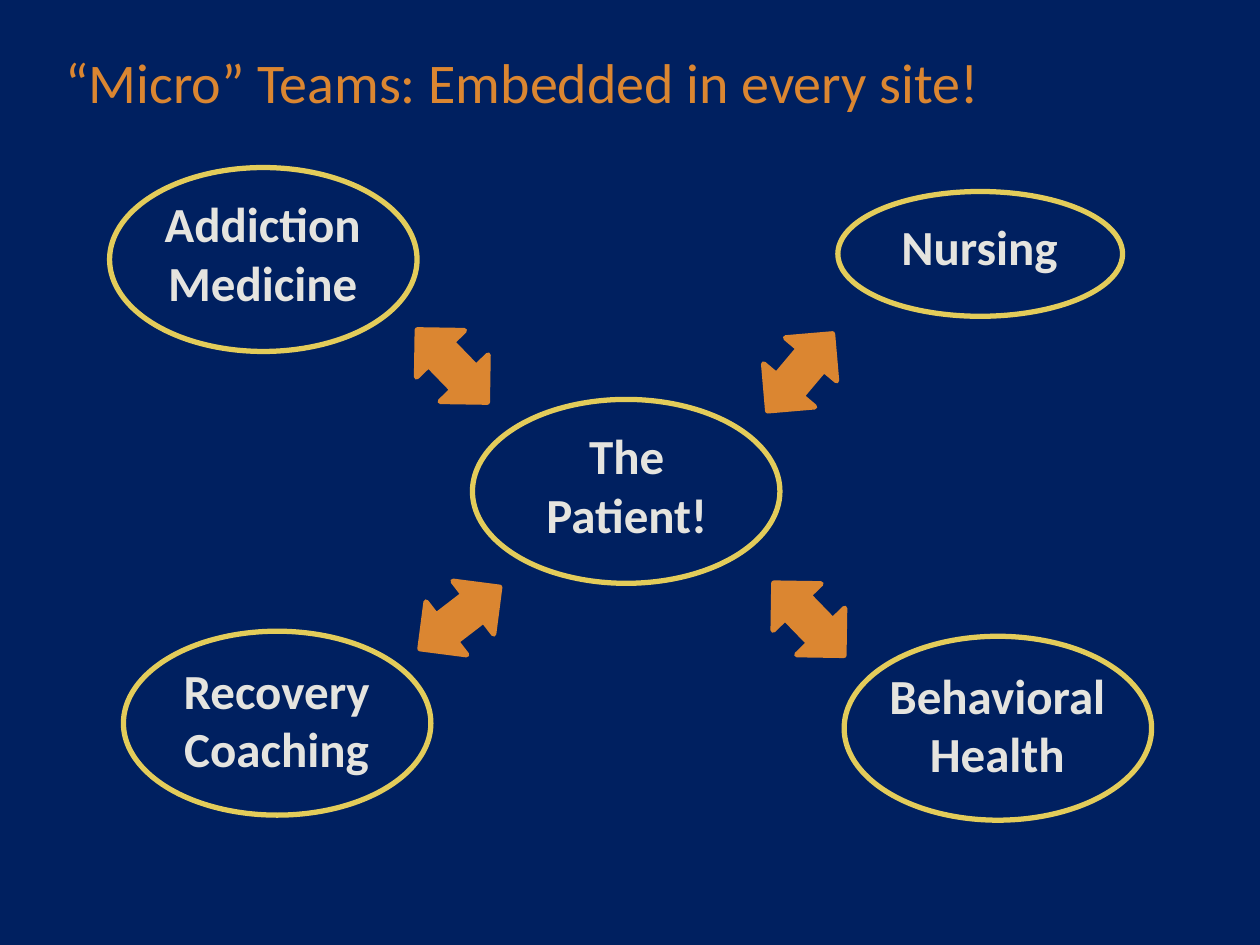
"""Build a slide of the care teams placed around the patient."""
import pptx
import pptx.util
import pptx.dml.color
import pptx.enum.shapes
import pptx.enum.text

Inches = pptx.util.Inches
Kind = pptx.enum.shapes.MSO_SHAPE
Align = pptx.enum.text.PP_ALIGN
hues = {"back": "002060", "accent": "DB8631", "ring": "E3CC5A", "label": "E5E4DF"}
tint = {name: pptx.dml.color.RGBColor.from_string(hue) for name, hue in hues.items()}
title_font = {"name": "Calibri", "size": pptx.util.Pt(32), "bold": False}
label_font = {"name": "Calibri", "size": pptx.util.Pt(28), "bold": True}

deck = pptx.Presentation()
deck.slide_width, deck.slide_height = Inches(10), Inches(7.5)
slide = deck.slides.add_slide(deck.slide_layouts[6])
slide.background.fill.solid()
slide.background.fill.fore_color.rgb = tint["back"]


def add_text(box, text, look, hue, align):
    frame = slide.shapes.add_textbox(*map(Inches, box)).text_frame
    frame.word_wrap = True
    frame.text = text
    for para in frame.paragraphs:
        para.alignment = align
        para.font.color.rgb = tint[hue]
        for key, value in look.items():
            setattr(para.font, key, value)


def add_form(kind, box, hue, turn=0):
    form = slide.shapes.add_shape(kind, *map(Inches, box))
    form.shadow.inherit = False
    form.rotation = turn
    form.fill.background()
    form.line.color.rgb = tint[hue]
    form.line.width = pptx.util.Pt(3)
    return form


add_text((0.42, 0.33, 9.27, 0.75), "“Micro” Teams: Embedded in every site!",
         title_font, "accent", Align.LEFT)

arrows = [(3.19, 2.64, 45.9), (5.95, 2.69, 130.1),
          (3.25, 4.64, 322.4), (6.02, 4.65, 45.9)]
for left, top, turn in arrows:
    arrow = add_form(Kind.LEFT_RIGHT_ARROW, (left, top, 0.8, 0.53), "accent", turn)
    arrow.fill.solid()
    arrow.fill.fore_color.rgb = tint["accent"]

big, small = (2.44, 1.46), (2.26, 0.99)
teams = [
    ("Addiction Medicine", (0.87, 1.33), big, (0.67, 1.49), 1.04),
    ("Nursing", (6.65, 1.52), small, (6.36, 1.67), 0.57),
    ("Recovery Coaching", (0.98, 5.01), big, (0.78, 5.19), 1.04),
    ("Behavioral Health", (6.7, 5.05), big, (6.5, 5.23), 1.04),
    ("The\nPatient!", (3.75, 3.17), big, (3.56, 3.33), 1.04),
]
for name, spot, size, start, high in teams:
    add_form(Kind.OVAL, spot + size, "ring")
    add_text(start + (2.83, high), name, label_font, "label", Align.CENTER)

deck.save("out.pptx")
